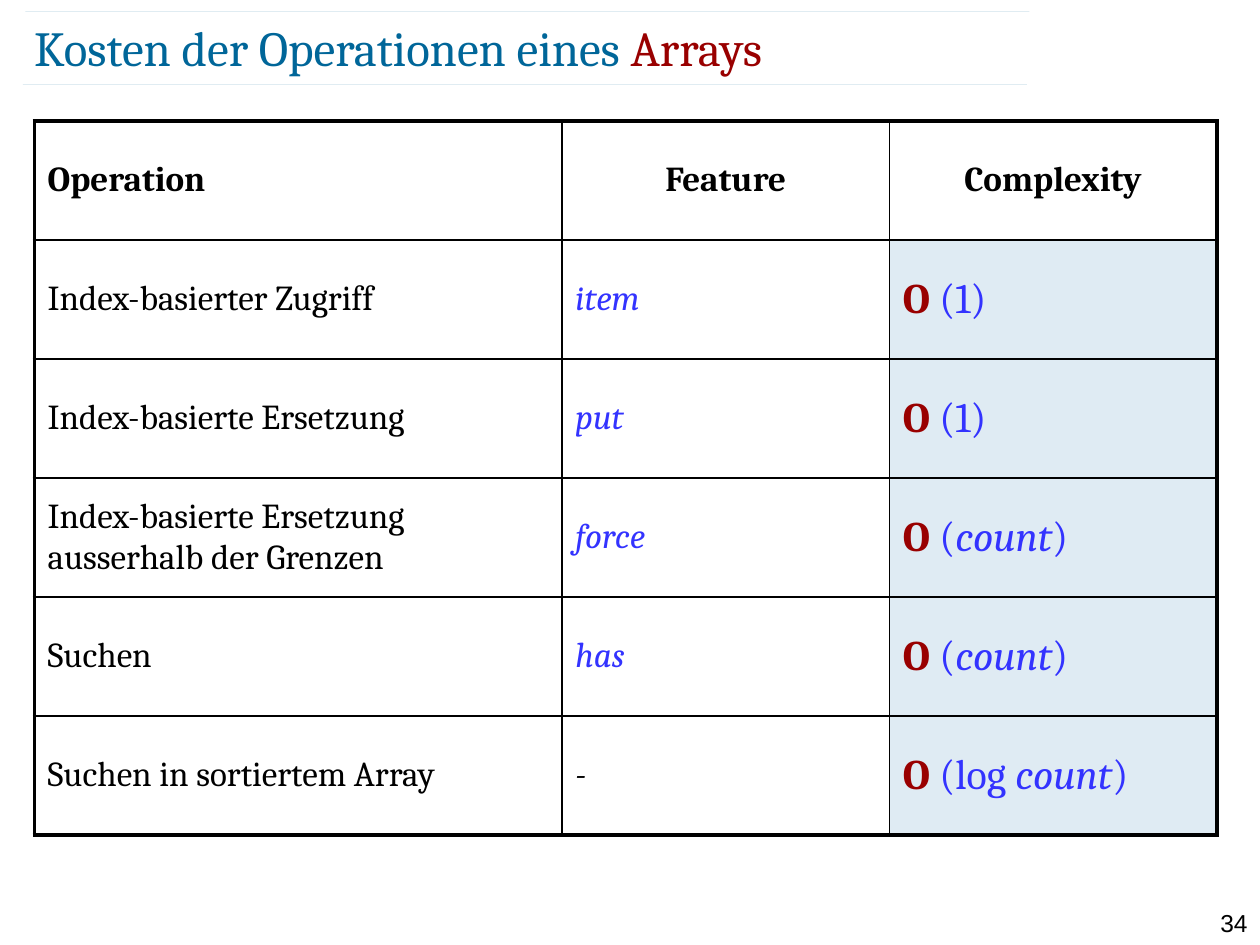
from dataclasses import dataclass

from pptx import Presentation
from pptx.dml.color import RGBColor as Rgb
from pptx.enum.shapes import MSO_CONNECTOR as Connector
from pptx.enum.text import MSO_ANCHOR as Anchor, MSO_AUTO_SIZE as AutoSize, PP_ALIGN as Align
from pptx.oxml.ns import qn
from pptx.oxml.xmlchemy import OxmlElement as Element
from pptx.util import Cm, Pt


@dataclass(frozen=True)
class Theme:
    """Colours, fonts and type sizes of the page."""

    serif: str = "Cambria"
    sans: str = "Arial"
    teal: str = "006699"
    red: str = "990000"
    blue: str = "3333FF"
    black: str = "000000"
    tint: str = "DFEBF3"
    title: int = 28
    formula: int = 24
    body: int = 20
    number: int = 14
    thick: float = 2.25
    thin: float = 1
    hairline: float = 0.1


def assign(target, values):
    """Set each named attribute on the target."""
    for name, value in values.items():
        setattr(target, name, value)


class PageBuilder:
    """Holds the theme and the current page."""

    def __init__(self, deck, theme):
        """Open a page with a title placeholder."""
        self.theme = theme
        self.page = deck.slides.add_slide(deck.slide_layouts[5])

    def add_spans(self, para, spans, align=Align.LEFT):
        """Fill a paragraph with (text, colour, font values) spans."""
        para.alignment = align
        for text, colour, values in spans:
            span = para.add_run()
            span.text = text
            span.font.color.rgb = Rgb.from_string(colour)
            assign(span.font, {"name": self.theme.serif, "bold": False, "italic": False} | values)

    def title(self, spans, left, top, width, height):
        """Place and fill the title."""
        box = self.page.shapes.title
        assign(box, {"left": Cm(left), "top": Cm(top), "width": Cm(width), "height": Cm(height)})
        margins = {f"margin_{side}": 0 for side in ("left", "top", "right", "bottom")}
        assign(box.text_frame, margins | {
            "auto_size": AutoSize.NONE, "word_wrap": True, "vertical_anchor": Anchor.MIDDLE})
        self.add_spans(box.text_frame.paragraphs[0], spans)

    def number(self, text, left, top, width, height):
        """Add the page number."""
        box = self.page.shapes.add_textbox(Cm(left), Cm(top), Cm(width), Cm(height))
        box.text_frame.word_wrap = True
        values = {"name": self.theme.sans, "size": Pt(self.theme.number)}
        self.add_spans(box.text_frame.paragraphs[0], [(text, self.theme.black, values)], Align.RIGHT)

    def rule(self, left, top, width):
        """Add a faint horizontal line."""
        line = self.page.shapes.add_connector(
            Connector.STRAIGHT, Cm(left), Cm(top), Cm(left + width), Cm(top))
        line.line.width = Pt(self.theme.hairline)
        line.line.color.rgb = Rgb.from_string(self.theme.teal)
        alpha = Element("a:alpha")
        alpha.set("val", "35000")
        properties = line._element.spPr
        properties.find(".//" + qn("a:srgbClr")).append(alpha)
        properties.append(Element("a:effectLst"))

    def border(self, cell, outer):
        """Draw the cell's edges, thicker on the outer sides."""
        properties = cell._tc.get_or_add_tcPr()
        for side in "LRTB":
            edge = Element(f"a:ln{side}")
            edge.set("w", str(Pt(self.theme.thick if side in outer else self.theme.thin)))
            fill, colour = Element("a:solidFill"), Element("a:srgbClr")
            colour.set("val", self.theme.black)
            fill.append(colour)
            edge.append(fill)
            properties.append(edge)

    def table(self, rows, left, top, widths, row_height):
        """Add a table with a heading row and a tinted last column."""
        last_row, last_column = len(rows) - 1, len(widths) - 1
        grid = self.page.shapes.add_table(
            len(rows), len(widths), Cm(left), Cm(top),
            Cm(sum(widths)), Cm(row_height * len(rows))).table
        assign(grid, {"first_row": False, "horz_banding": False})
        for column, width in zip(grid.columns, widths):
            column.width = Cm(width)
        for r, row in enumerate(rows):
            for c, spans in enumerate(row):
                cell = grid.cell(r, c)
                assign(cell, {
                    "margin_left": Cm(0.27), "margin_right": Cm(0.27),
                    "margin_top": Cm(0.13), "margin_bottom": Cm(0.13),
                    "vertical_anchor": Anchor.MIDDLE})
                edges = {"L": c == 0, "R": c == last_column, "T": r == 0, "B": r == last_row}
                self.border(cell, [side for side, outer in edges.items() if outer])
                if r and c == last_column:
                    cell.fill.solid()
                    cell.fill.fore_color.rgb = Rgb.from_string(self.theme.tint)
                else:
                    cell.fill.background()
                align = Align.CENTER if r == 0 and c else Align.LEFT
                self.add_spans(cell.text_frame.paragraphs[0], spans, align)


def cost_rows(theme):
    """Compose the spans of the cost table."""
    body, formula = {"size": Pt(theme.body)}, {"size": Pt(theme.formula)}
    count = ("count", True)
    costs = [
        ("Index-basierter Zugriff", "item", [(" (1)", False)]),
        ("Index-basierte Ersetzung", "put", [(" (1)", False)]),
        ("Index-basierte Ersetzung ausserhalb der Grenzen", "force",
         [(" (", False), count, (")", False)]),
        ("Suchen", "has", [(" (", False), count, (")", False)]),
        ("Suchen in sortiertem Array", "-", [(" (log ", False), count, (")", False)]),
    ]
    rows = [[[(heading, theme.black, body | {"bold": True})]
             for heading in ("Operation", "Feature", "Complexity")]]
    for operation, feature, terms in costs:
        colour = theme.black if feature == "-" else theme.blue
        order = [("O", theme.red, formula | {"bold": True})]
        order += [(text, theme.blue, formula | {"italic": italic}) for text, italic in terms]
        rows.append([[(operation, theme.black, body)],
                     [(feature, colour, body | {"italic": True})], order])
    return rows


def main():
    """Build and save the deck."""
    theme = Theme()
    deck = Presentation()
    assign(deck, {"slide_width": Cm(25.4), "slide_height": Cm(19.05)})
    page = PageBuilder(deck, theme)
    page.number("34", 24, 18.19, 1.4, 0.61)
    page.rule(0.46, 1.7, 20.24)
    page.rule(0.51, 0.23, 20.24)
    size = {"size": Pt(theme.title)}
    page.title([("Kosten der Operationen eines ", theme.teal, size), ("Arrays", theme.red, size)],
               0.69, 0.33, 22.07, 1.22)
    page.table(cost_rows(theme), 0.69, 2.44, [10.64, 6.6, 6.6], 2.4)
    deck.save("out.pptx")


if __name__ == "__main__":
    main()
